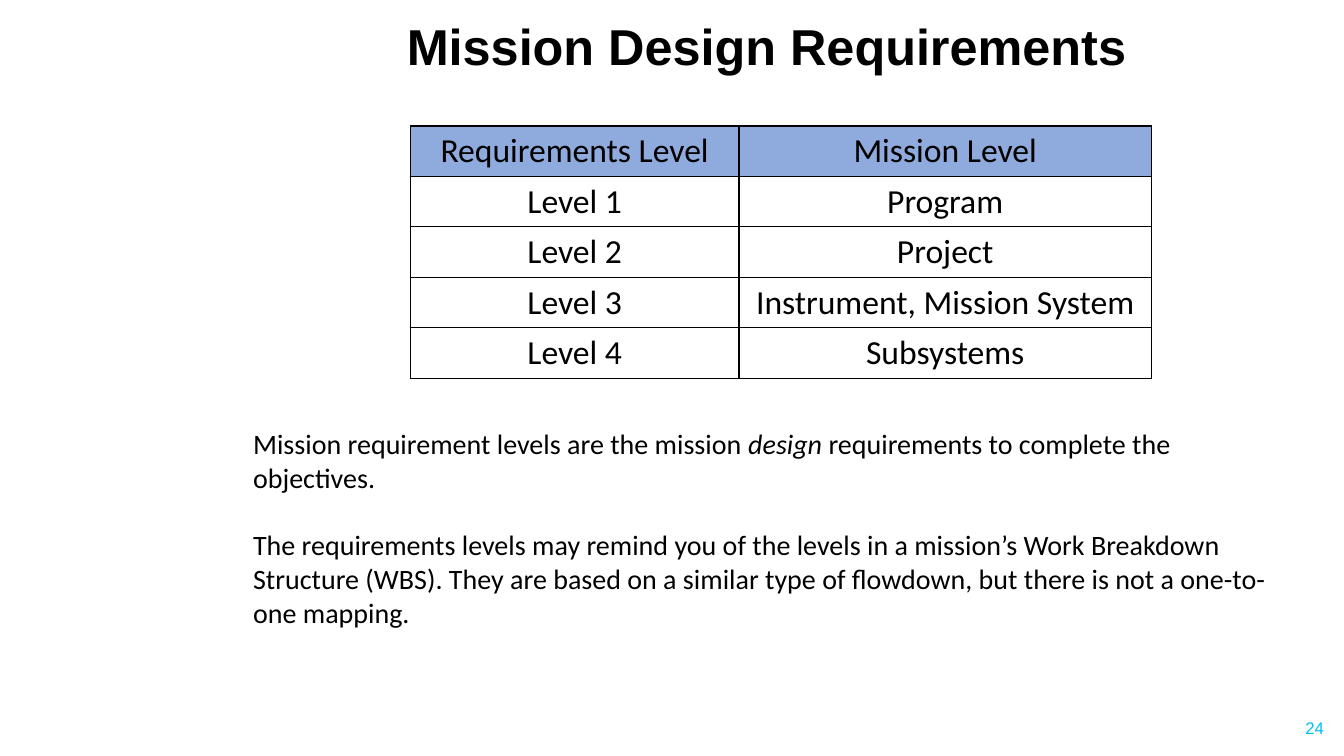
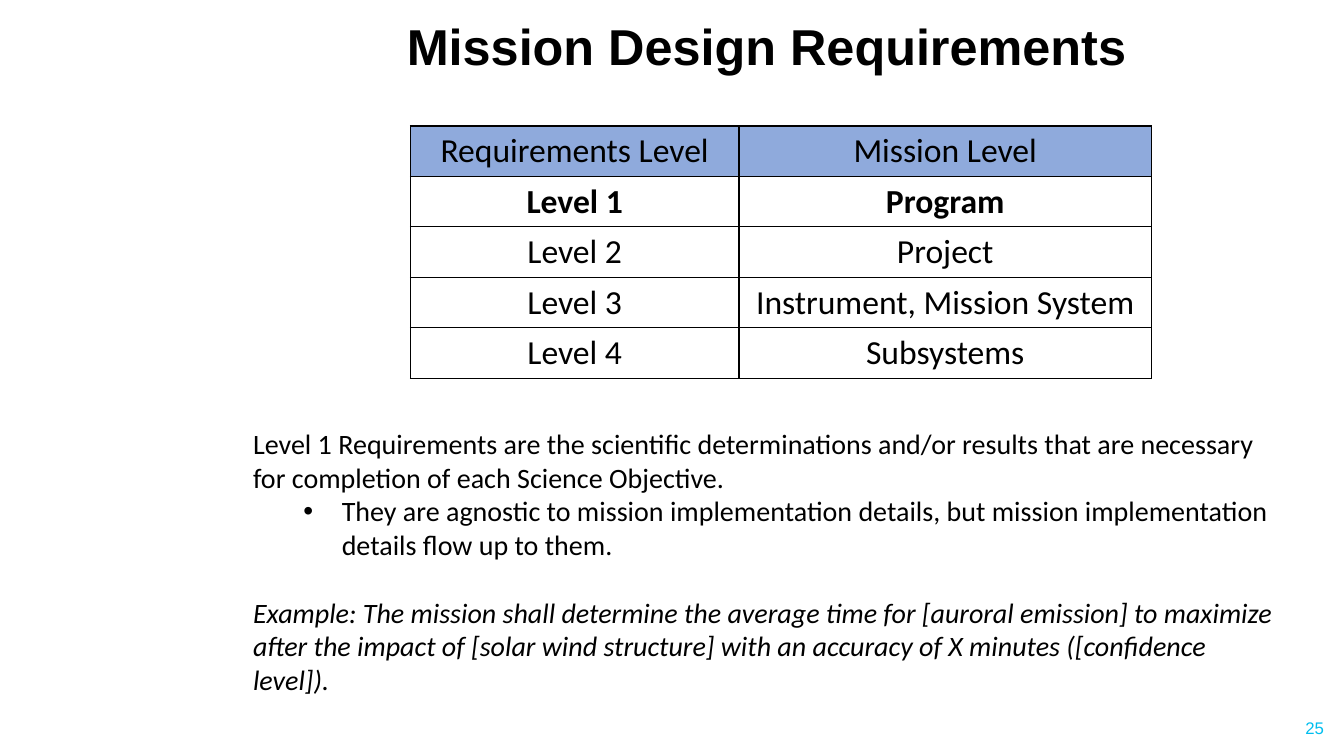
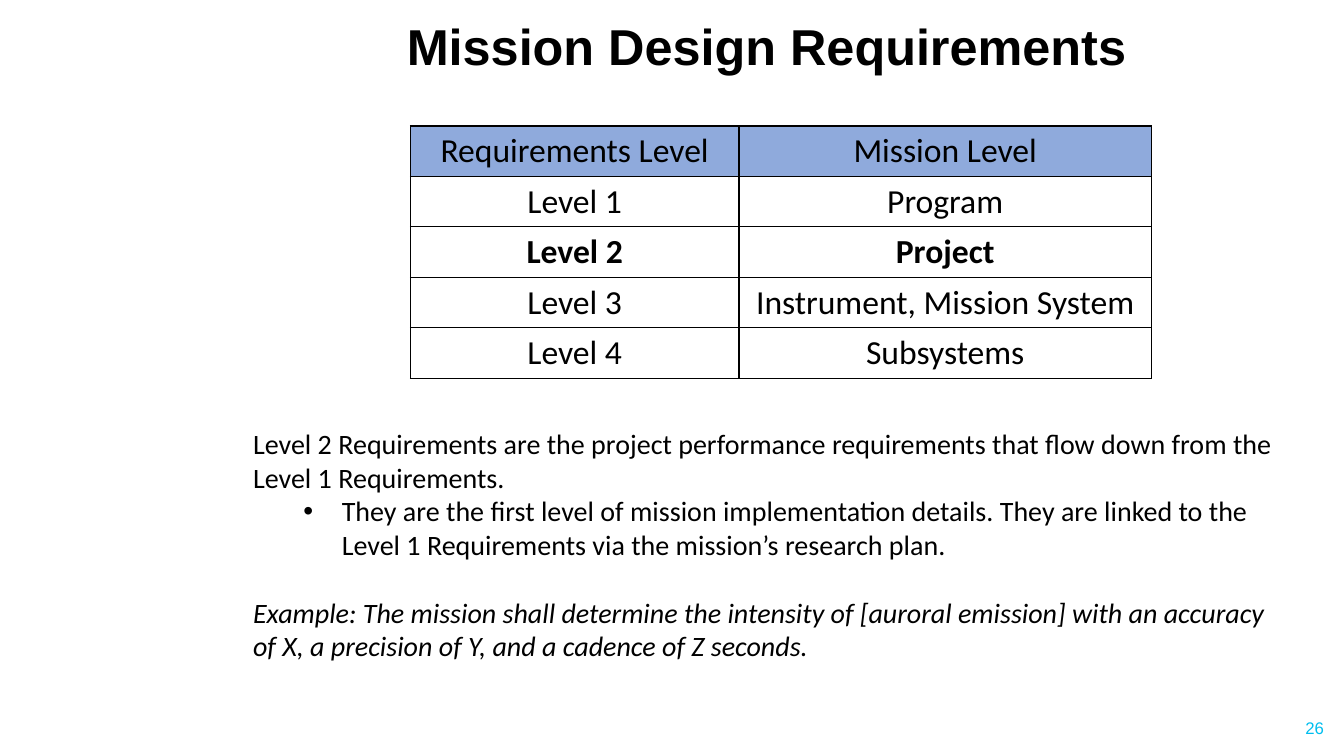
"""Build the mission design requirements slides."""
from dataclasses import dataclass

import lxml.etree
import pptx
import pptx.dml.color
import pptx.enum.text
import pptx.oxml.ns
import pptx.util
from pptx.util import Inches, Pt

TITLE = "Mission Design Requirements"
FIRST_NUMBER = 24
LEVELS = [
    ("Requirements Level", "Mission Level"),
    ("Level 1", "Program"),
    ("Level 2", "Project"),
    ("Level 3", "Instrument, Mission System"),
    ("Level 4", "Subsystems"),
]
SLIDES = [
    {
        "bold_row": None,
        "height": 2.12,
        "body": [
            ("plain", [("Mission requirement levels are the mission ", False),
                       ("design", True),
                       (" requirements to complete the objectives.", False)]),
            ("spaced", [("The requirements levels may remind you of the levels in a mission’s "
                         "Work Breakdown Structure (WBS). They are based on a similar type of "
                         "flowdown, but there is not a one-to-one mapping.", False)]),
        ],
    },
    {
        "bold_row": 1,
        "height": 2.79,
        "body": [
            ("plain", [("Level 1 Requirements are the scientific determinations and/or results "
                        "that are necessary for completion of each Science Objective.", False)]),
            ("bullet", [("They are agnostic to mission implementation details, but mission "
                         "implementation details flow up to them.", False)]),
            ("spaced", [("Example: The mission shall determine the average time for [auroral "
                         "emission] to maximize after the impact of [solar wind structure] with "
                         "an accuracy of X minutes ([confidence level]).", True)]),
        ],
    },
    {
        "bold_row": 2,
        "height": 2.46,
        "body": [
            ("plain", [("Level 2 Requirements are the project performance requirements that flow "
                        "down from the Level 1 Requirements.", False)]),
            ("bullet", [("They are the first level of mission implementation details. They are "
                         "linked to the Level 1 Requirements via the mission’s research plan.",
                         False)]),
            ("spaced", [("Example: The mission shall determine the intensity of [auroral "
                         "emission] with an accuracy of X, a precision of Y, and a cadence of "
                         "Z seconds.", True)]),
        ],
    },
]


@dataclass(frozen=True)
class Theme:
    """Colours, fonts and type sizes."""
    ink: str = "000000"
    paper: str = "FFFFFF"
    header: str = "8FAADC"
    number: str = "00BEEF"
    heading_font: str = "Arial"
    body_font: str = "Calibri"
    title_size: float = 36
    table_size: float = 24
    body_size: float = 20
    number_size: float = 12
    paragraph_gap: float = 24.4


THEME = Theme()
ALIGN = pptx.enum.text.PP_ALIGN
MIDDLE = pptx.enum.text.MSO_ANCHOR.MIDDLE
COLUMN_WIDTHS = (3.26, 4.09)
ROW_HEIGHT = 0.5


def rgb(colour):
    """Return a colour object."""
    return pptx.dml.color.RGBColor.from_string(colour)


def style(font, size, name, colour=THEME.ink, bold=False, italic=False):
    """Format a font."""
    font.size, font.name = Pt(size), name
    font.bold, font.italic = bold, italic
    font.color.rgb = rgb(colour)


def place(shape, left, top, width, height):
    """Position a shape, in inches."""
    shape.left, shape.top = Inches(left), Inches(top)
    shape.width, shape.height = Inches(width), Inches(height)


def add_element(parent, tag, **attributes):
    """Append a drawing element."""
    return lxml.etree.SubElement(parent, pptx.oxml.ns.qn(tag), attributes)


def set_title(slide):
    """Fill the title placeholder."""
    title = slide.shapes.title
    place(title, 2.53, 0.16, 10.15, 0.65)
    frame = title.text_frame
    frame.text = TITLE
    frame.vertical_anchor = MIDDLE
    frame.auto_size = pptx.enum.text.MSO_AUTO_SIZE.NONE
    paragraph = frame.paragraphs[0]
    paragraph.alignment = ALIGN.CENTER
    paragraph.line_spacing = 0.9
    style(paragraph.runs[0].font, THEME.title_size, THEME.heading_font, bold=True)


def add_number(slide, number):
    """Add the slide number."""
    box = slide.shapes.add_textbox(Inches(10.23), Inches(7.02), Inches(3), Inches(0.4))
    frame = box.text_frame
    frame.word_wrap = True
    frame.vertical_anchor = MIDDLE
    frame.text = str(number)
    paragraph = frame.paragraphs[0]
    paragraph.alignment = ALIGN.RIGHT
    style(paragraph.runs[0].font, THEME.number_size, THEME.heading_font, THEME.number)


def set_body(slide, body, height):
    """Fill the body placeholder."""
    placeholder = slide.placeholders[1]
    place(placeholder, 2.41, 4.18, 10.44, height)
    frame = placeholder.text_frame
    frame.vertical_anchor = pptx.enum.text.MSO_ANCHOR.TOP
    frame.auto_size = pptx.enum.text.MSO_AUTO_SIZE.NONE
    for index, (kind, runs) in enumerate(body):
        paragraph = frame.add_paragraph() if index else frame.paragraphs[0]
        paragraph.space_before = Pt(THEME.paragraph_gap if kind == "spaced" else 0)
        bullet = kind == "bullet"
        paragraph.level = int(bullet)
        properties = paragraph._p.get_or_add_pPr()
        properties.set("marL", str(Inches(0.88 if bullet else 0)))
        properties.set("indent", str(Inches(-0.38 if bullet else 0)))
        if bullet:
            add_element(properties, "a:buFont", typeface=THEME.heading_font)
            add_element(properties, "a:buChar", char="•")
        else:
            add_element(properties, "a:buNone")
        for text, italic in runs:
            run = paragraph.add_run()
            run.text = text
            style(run.font, THEME.body_size, THEME.body_font, italic=italic)


def add_borders(cell):
    """Draw all four borders of a cell."""
    properties = cell._tc.get_or_add_tcPr()
    for side in ("a:lnL", "a:lnR", "a:lnT", "a:lnB"):
        line = add_element(properties, side, w=str(Pt(1)))
        add_element(add_element(line, "a:solidFill"), "a:srgbClr", val=THEME.ink)


def add_levels(slide, bold_row):
    """Add the table of levels."""
    frame = slide.shapes.add_table(
        len(LEVELS), len(COLUMN_WIDTHS), Inches(4.07), Inches(1.25),
        Inches(sum(COLUMN_WIDTHS)), Inches(ROW_HEIGHT * len(LEVELS)))
    table = frame.table
    table.first_row = table.horz_banding = False
    for column, width in zip(table.columns, COLUMN_WIDTHS):
        column.width = Inches(width)
    for row_index, texts in enumerate(LEVELS):
        for column_index, text in enumerate(texts):
            cell = table.cell(row_index, column_index)
            cell.text = text
            cell.vertical_anchor = MIDDLE
            add_borders(cell)
            cell.fill.solid()
            cell.fill.fore_color.rgb = rgb(THEME.paper if row_index else THEME.header)
            paragraph = cell.text_frame.paragraphs[0]
            paragraph.alignment = ALIGN.CENTER
            style(paragraph.runs[0].font, THEME.table_size, THEME.body_font,
                  bold=row_index == bold_row)


def main():
    """Build and save the presentation."""
    presentation = pptx.Presentation()
    presentation.slide_width, presentation.slide_height = Inches(13.33), Inches(7.5)
    for number, content in enumerate(SLIDES, FIRST_NUMBER):
        slide = presentation.slides.add_slide(presentation.slide_layouts[1])
        set_title(slide)
        add_number(slide, number)
        set_body(slide, content["body"], content["height"])
        add_levels(slide, content["bold_row"])
    presentation.save("out.pptx")


if __name__ == "__main__":
    main()
